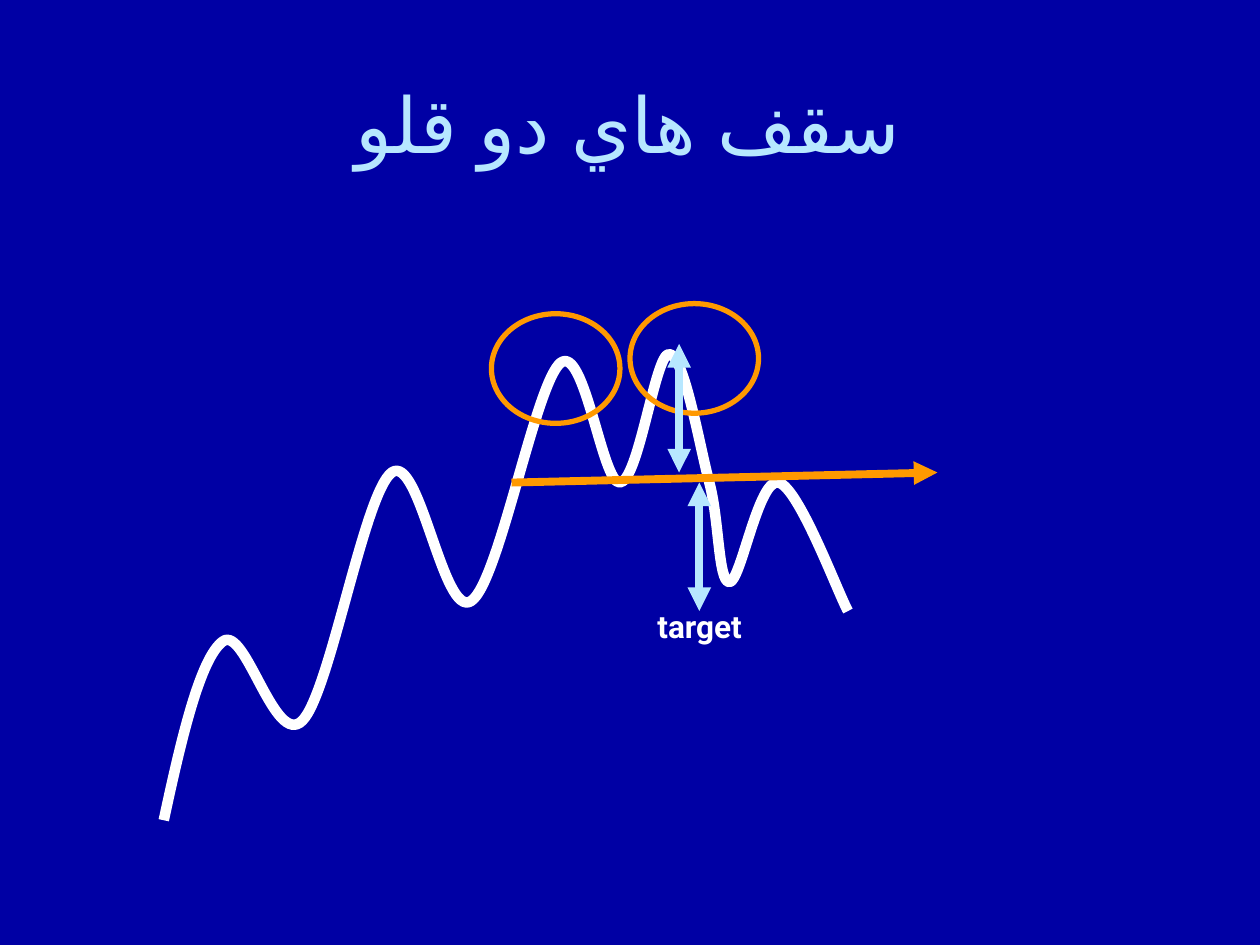
from lxml.etree import SubElement
from pptx import Presentation
from pptx.dml.color import RGBColor
from pptx.enum.lang import MSO_LANGUAGE_ID
from pptx.enum.shapes import MSO_CONNECTOR, MSO_SHAPE
from pptx.enum.text import MSO_ANCHOR, MSO_AUTO_SIZE, PP_ALIGN
from pptx.oxml.ns import qn
from pptx.util import Inches, Pt

NAVY = RGBColor(0x00, 0x00, 0xA4)
PALE_BLUE = RGBColor(0xB7, 0xE7, 0xFF)
ORANGE = RGBColor(0xFF, 0x99, 0x00)
WHITE = RGBColor(0xFF, 0xFF, 0xFF)

# Start point, then two control points and an end point for each curve
PRICE_CURVE = [
    (1.3, 6.51),
    (1.44, 5.86), (1.59, 5.22), (1.77, 5.09),
    (1.95, 4.96), (2.18, 5.94), (2.4, 5.72),
    (2.62, 5.5), (2.89, 3.91), (3.11, 3.75),
    (3.33, 3.59), (3.52, 4.92), (3.74, 4.77),
    (3.96, 4.63), (4.25, 3.04), (4.45, 2.88),
    (4.64, 2.73), (4.78, 3.84), (4.92, 3.83),
    (5.07, 3.82), (5.2, 2.81), (5.31, 2.81),
    (5.43, 2.81), (5.55, 3.53), (5.63, 3.83),
    (5.71, 4.13), (5.7, 4.62), (5.79, 4.62),
    (5.88, 4.62), (6.02, 3.79), (6.18, 3.83),
    (6.34, 3.87), (6.64, 4.68), (6.73, 4.85),
]


def format_text(paragraph, alignment, font_name, size, color):
    """Format a right-to-left paragraph and its runs."""
    paragraph.alignment = alignment
    paragraph._p.get_or_add_pPr().set("rtl", "1")
    for run in paragraph.runs:
        run.font.name = font_name
        run.font.size = Pt(size)
        run.font.color.rgb = color
        SubElement(run._r.get_or_add_rPr(), qn("a:cs"), typeface=font_name)


def add_arrow(slide, start, end, color, head_tags):
    arrow = slide.shapes.add_connector(
        MSO_CONNECTOR.STRAIGHT, *map(Inches, start + end))
    arrow.line.color.rgb = color
    arrow.line.width = Pt(4.5)
    properties = arrow._element.spPr
    for tag in head_tags:
        SubElement(properties.find(qn("a:ln")), qn(tag), type="triangle")
    SubElement(properties, qn("a:effectLst"))


presentation = Presentation()
presentation.slide_width = Inches(10)
presentation.slide_height = Inches(7.5)
slide = presentation.slides.add_slide(presentation.slide_layouts[5])
slide.background.fill.solid()
slide.background.fill.fore_color.rgb = NAVY

title = slide.shapes.title
title.left, title.top = Inches(0.33), Inches(0.25)
title.width, title.height = Inches(9.31), Inches(1.45)
title.text_frame.text = "سقف هاي دو قلو"
title.text_frame.vertical_anchor = MSO_ANCHOR.MIDDLE
format_text(title.text_frame.paragraphs[0], PP_ALIGN.CENTER, "Arial", 44, PALE_BLUE)
title.text_frame.paragraphs[0].runs[0].font.language_id = MSO_LANGUAGE_ID.FARSI

# Price line: each three straight segments become one Bézier segment
points = [(Inches(x), Inches(y)) for x, y in PRICE_CURVE]
builder = slide.shapes.build_freeform(*points[0])
builder.add_line_segments(points[1:], close=False)
price_line = builder.convert_to_shape()
price_line.shadow.inherit = False
price_line.fill.background()
price_line.line.color.rgb = WHITE
price_line.line.width = Pt(6)
curve_path = price_line._element.find(".//" + qn("a:path"))
segments = curve_path.findall(qn("a:lnTo"))
for first in range(0, len(segments), 3):
    bezier = SubElement(curve_path, qn("a:cubicBezTo"))
    for segment in segments[first:first + 3]:
        bezier.append(segment[0])
        curve_path.remove(segment)

for left, top in [(3.9, 2.49), (5, 2.41)]:
    peak_ring = slide.shapes.add_shape(
        MSO_SHAPE.OVAL, Inches(left), Inches(top), Inches(1.02), Inches(0.87))
    peak_ring.shadow.inherit = False
    peak_ring.fill.background()
    peak_ring.line.color.rgb = ORANGE
    peak_ring.line.width = Pt(3)

add_arrow(slide, (4.06, 3.83), (7.44, 3.75), ORANGE, ["a:tailEnd"])
for x, bottom in [(5.39, 3.75), (5.55, 4.85)]:
    add_arrow(slide, (x, bottom), (x, bottom - 1.02), PALE_BLUE,
              ["a:headEnd", "a:tailEnd"])

target_label = slide.shapes.add_textbox(
    Inches(5.12), Inches(4.77), Inches(0.97), Inches(0.4))
target_frame = target_label.text_frame
target_frame.word_wrap = False
target_frame.auto_size = MSO_AUTO_SIZE.SHAPE_TO_FIT_TEXT
target_frame.text = "target"
format_text(target_frame.paragraphs[0], PP_ALIGN.LEFT, "Roboto", 18, WHITE)
target_frame.paragraphs[0].runs[0].font.bold = True

presentation.save("out.pptx")
